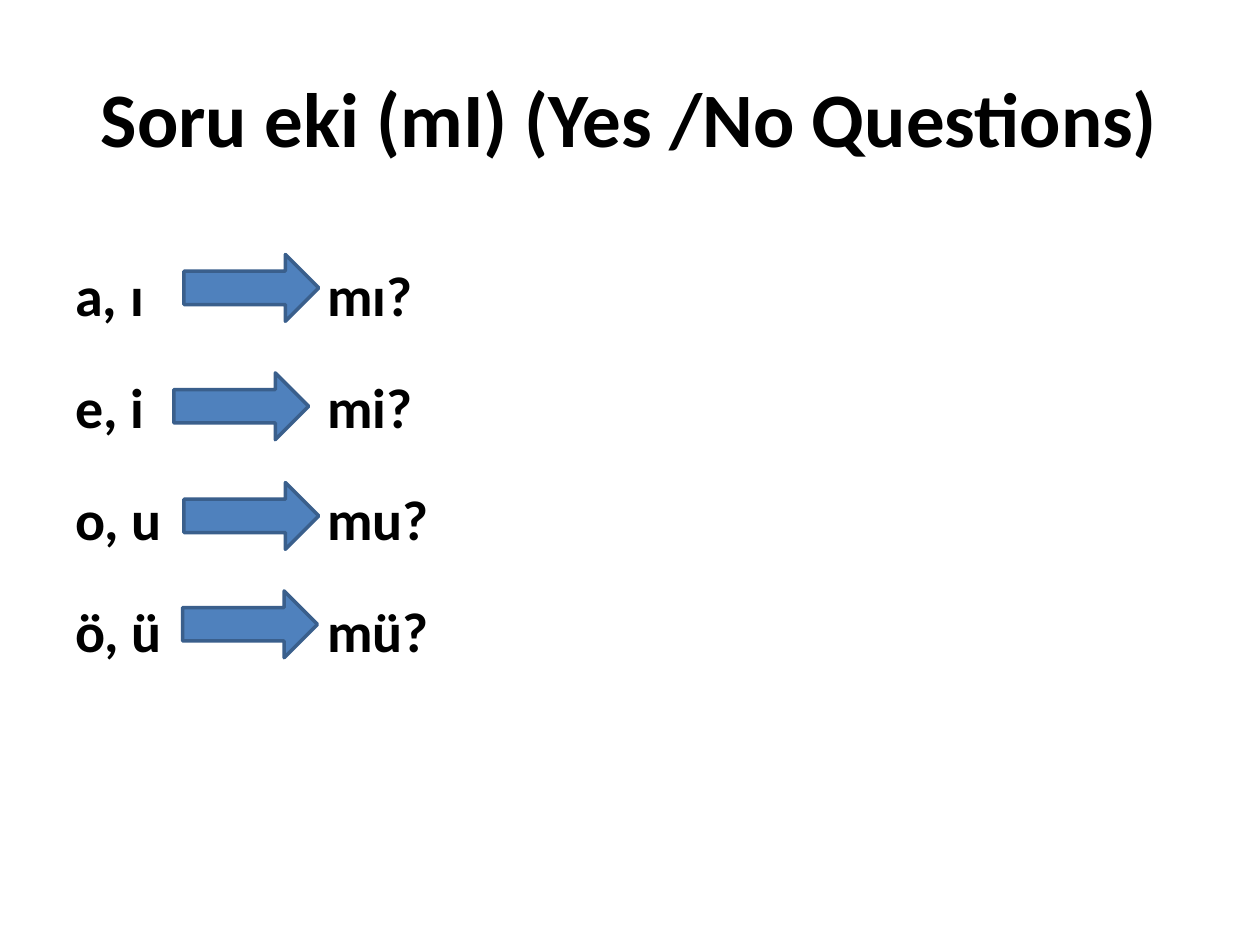
import lxml.etree
import pptx
import pptx.dml.color
import pptx.enum.shapes
import pptx.enum.text
import pptx.oxml.ns
import pptx.util
from pptx.util import Inches


def colour(hex_code):
    return pptx.dml.color.RGBColor.from_string(hex_code)


def set_tab_stops(paragraph, stops):
    """Add left tab stops, in inches; the paragraph's font must be set before."""
    qn = pptx.oxml.ns.qn
    tab_list = lxml.etree.Element(qn("a:tabLst"))
    for stop in stops:
        lxml.etree.SubElement(tab_list, qn("a:tab"), pos=str(Inches(stop)), algn="l")
    paragraph._p.pPr.find(qn("a:defRPr")).addprevious(tab_list)


class QuestionSlide:
    font_name = "Calibri"
    text_colour = "000000"
    arrow_fill = "4F81BD"
    arrow_line = "3A5F8C"

    def __init__(self, presentation):
        self.slide = presentation.slides.add_slide(presentation.slide_layouts[6])

    def text(self, lines, left, top, width, height, size, align, anchor,
             line_spacing=1.0, space_before=0, tab_stops=()):
        box = self.slide.shapes.add_textbox(
            Inches(left), Inches(top), Inches(width), Inches(height))
        frame = box.text_frame
        frame.word_wrap = True
        frame.vertical_anchor = anchor
        frame.text = "\n".join(lines)
        for paragraph in frame.paragraphs:
            paragraph.alignment = align
            paragraph.line_spacing = line_spacing
            paragraph.space_before = pptx.util.Pt(space_before)
            paragraph.font.name = self.font_name
            paragraph.font.size = pptx.util.Pt(size)
            paragraph.font.bold = True
            paragraph.font.color.rgb = colour(self.text_colour)
            if tab_stops:
                set_tab_stops(paragraph, tab_stops)

    def arrow(self, left, top):
        arrow = self.slide.shapes.add_shape(
            pptx.enum.shapes.MSO_SHAPE.RIGHT_ARROW,
            Inches(left), Inches(top), Inches(1.07), Inches(0.53))
        arrow.shadow.inherit = False
        arrow.fill.solid()
        arrow.fill.fore_color.rgb = colour(self.arrow_fill)
        arrow.line.color.rgb = colour(self.arrow_line)
        arrow.line.width = pptx.util.Pt(2)


def main():
    presentation = pptx.Presentation()
    presentation.slide_width = Inches(10)
    presentation.slide_height = Inches(7.5)
    page = QuestionSlide(presentation)

    align = pptx.enum.text.PP_ALIGN
    anchor = pptx.enum.text.MSO_ANCHOR
    page.text(["Soru eki (mI) (Yes /No Questions)"], 0.5, 0.3, 9, 1.25,
              size=44, align=align.CENTER, anchor=anchor.MIDDLE)

    # Vowels, question suffix, and the left and top of the arrow between them
    harmony = [
        ("a, ı", "mı?", 1.46, 2.02),
        ("e, i", "mi?", 1.38, 2.96),
        ("o, u", "mu?", 1.46, 3.83),
        ("ö, ü", "mü?", 1.45, 4.69),
    ]
    page.text([f"{vowels} \t\t{suffix}" for vowels, suffix, _, _ in harmony],
              0.5, 1.75, 9, 4.95, size=32, align=align.LEFT, anchor=anchor.TOP,
              line_spacing=1.5, space_before=6.4, tab_stops=(1, 2))
    for _, _, left, top in harmony:
        page.arrow(left, top)

    presentation.save("out.pptx")


if __name__ == "__main__":
    main()
